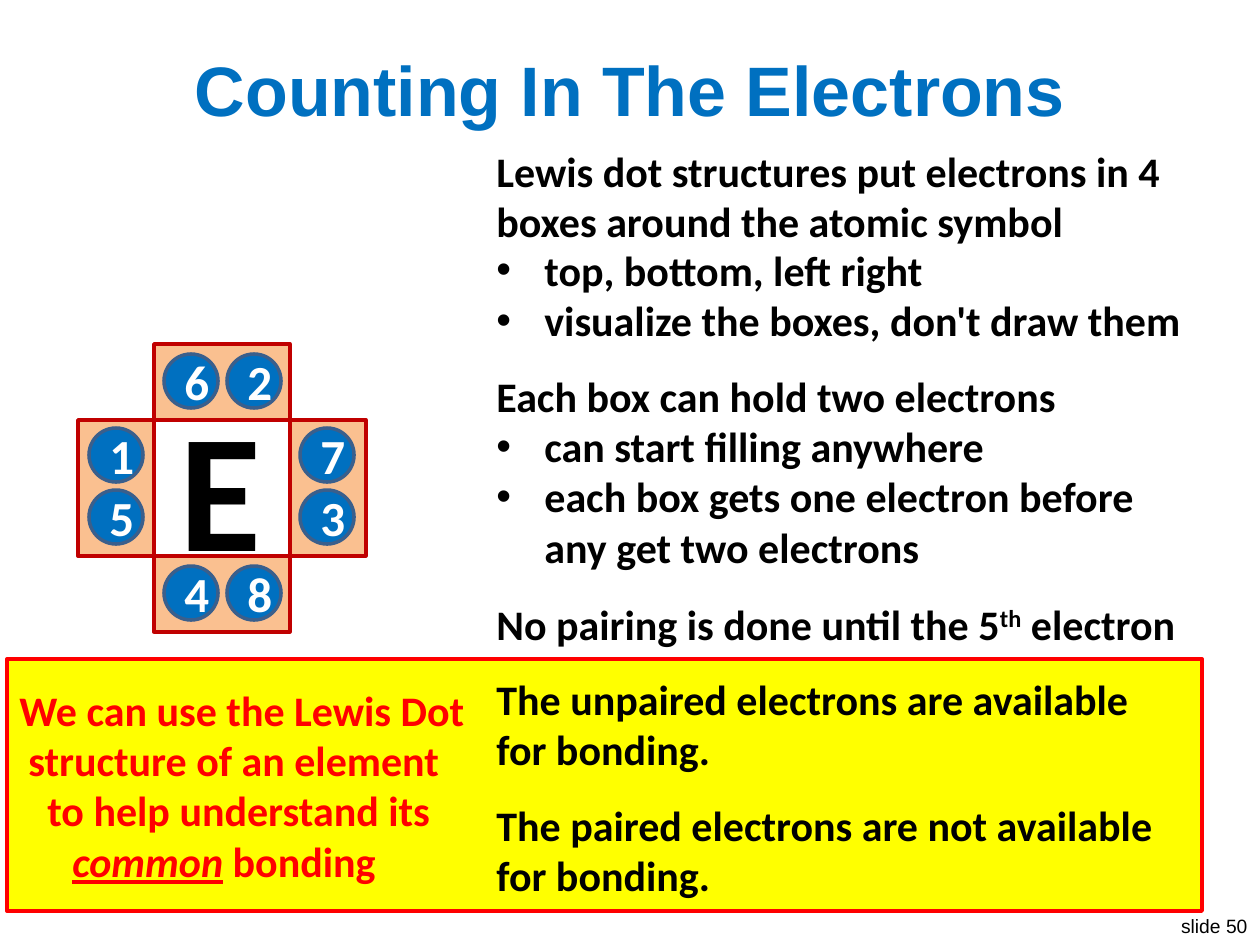
from lxml.etree import SubElement
from pptx import Presentation
from pptx.dml.color import RGBColor
from pptx.enum.shapes import MSO_SHAPE as SHAPE
from pptx.enum.text import MSO_ANCHOR as ANCHOR, MSO_AUTO_SIZE as FIT, PP_ALIGN as ALIGN
from pptx.oxml.ns import qn
from pptx.util import Pt

EMU_PER_PX = 914400 / 126
BLACK = RGBColor(0x00, 0x00, 0x00)
WHITE = RGBColor(0xFF, 0xFF, 0xFF)
BLUE = RGBColor(0x00, 0x70, 0xC0)
DARK_BLUE = RGBColor(0x3A, 0x5F, 0x8C)
PEACH = RGBColor(0xFA, 0xC0, 0x90)
CRIMSON = RGBColor(0xC0, 0x00, 0x00)
RED = RGBColor(0xFF, 0x00, 0x00)
YELLOW = RGBColor(0xFF, 0xFF, 0x00)
BULLET_INDENT = 48


def px(*lengths):
    return [round(length * EMU_PER_PX) for length in lengths]


def write(frame, paragraphs, size, color, align=ALIGN.LEFT, face="Calibri", bold=True):
    for index, (indent, bullet, pieces) in enumerate(paragraphs):
        paragraph = frame.paragraphs[0] if index == 0 else frame.add_paragraph()
        paragraph.alignment = align
        props = paragraph._p.get_or_add_pPr()
        props.set("marL", str(px(indent)[0]))
        props.set("indent", str(px(-indent if bullet else 0)[0]))
        if bullet:
            SubElement(props, qn("a:buFont"), typeface="Arial")
            SubElement(props, qn("a:buChar"), char="•")
        for words, changes in pieces:
            run = paragraph.add_run()
            run.text = words
            formats = {"name": face, "size": Pt(size), "bold": bold} | changes
            superscript = formats.pop("superscript", False)
            for key, value in formats.items():
                setattr(run.font, key, value)
            run.font.color.rgb = color
            if superscript:
                run._r.get_or_add_rPr().set("baseline", "30000")


deck = Presentation()
deck.slide_width, deck.slide_height = px(1260, 945)
slide = deck.slides.add_slide(deck.slide_layouts[6])
shapes = slide.shapes

slide_number = shapes.add_textbox(*px(1166, 908, 94, 37)).text_frame
slide_number.word_wrap = False
write(slide_number, [(0, False, [("slide 50", {})])], 11, BLACK, ALIGN.RIGHT, "Arial", False)

core_left, core_top, core, depth = 154, 420, 136, 76
electron_boxes = [
    (core_left + core, core_top, depth, core, True),
    (core_left, core_top + core, core, depth, True),
    (core_left - depth, core_top, depth, core, True),
    (core_left, core_top - depth, core, depth, True),
    (core_left, core_top, core, core, False),
]
for left, top, width, height, filled in electron_boxes:
    box = shapes.add_shape(SHAPE.RECTANGLE, *px(left, top, width, height))
    box.shadow.inherit = False
    if filled:
        box.fill.solid()
        box.fill.fore_color.rgb = PEACH
    else:
        box.fill.background()
    box.line.color.rgb = CRIMSON
    box.line.width = Pt(2)

electrons = [
    ("1", 89, 428), ("5", 89, 490), ("7", 300, 428), ("3", 300, 490),
    ("6", 164, 354), ("2", 227, 354), ("4", 164, 566), ("8", 227, 566),
]
for order, left, top in electrons:
    electron = shapes.add_shape(SHAPE.OVAL, *px(left, top, 54, 54))
    electron.shadow.inherit = False
    electron.fill.solid()
    electron.fill.fore_color.rgb = BLUE
    electron.line.color.rgb = DARK_BLUE
    electron.line.width = Pt(2)
    write(electron.text_frame, [(0, False, [(order, {})])], 28, WHITE, ALIGN.CENTER)

symbol = shapes.add_textbox(*px(179, 384, 83, 204)).text_frame
symbol.word_wrap = False
for side in ("left", "top", "right", "bottom"):
    setattr(symbol, f"margin_{side}", 0)
write(symbol, [(0, False, [("E", {})])], 96, BLACK, ALIGN.CENTER)

bonding = shapes.add_shape(SHAPE.RECTANGLE, *px(7, 659, 1195, 252))
bonding.shadow.inherit = False
bonding.fill.solid()
bonding.fill.fore_color.rgb = YELLOW
bonding.line.color.rgb = RED
bonding.line.width = Pt(2.25)
bonding.text_frame.vertical_anchor = ANCHOR.MIDDLE
write(bonding.text_frame, [
    (0, False, [("We can use the Lewis Dot", {})]),
    (9, False, [("structure of an element", {})]),
    (28, False, [("to help understand its", {})]),
    (53, False, [("common", {"italic": True, "underline": True}), (" bonding", {})]),
], 24, RED)

title = shapes.add_textbox(*px(25, 38, 1210, 101)).text_frame
title.word_wrap = True
title.vertical_anchor = ANCHOR.MIDDLE
write(title, [(0, False, [("Counting In The Electrons", {})])], 40, BLUE, ALIGN.CENTER, "Arial")

rules = [
    (667, 696, 115, [(False, [("The unpaired electrons are available for bonding.", {})])]),
    (793, 696, 115, [(False, [("The paired electrons are not available for bonding.", {})])]),
    (592, 713, 63, [(False, [("No pairing is done until the 5", {}),
                             ("th", {"superscript": True}), (" electron", {})])]),
    (139, 696, 115, [(False, [("Lewis dot structures put electrons in 4 boxes "
                               "around the atomic symbol", {})])]),
    (238, 718, 113, [(True, [("top, bottom, left right", {})]),
                     (True, [("visualize the boxes, don't draw them", {})])]),
    (364, 696, 217, [(False, [("Each box can hold two electrons", {})]),
                     (True, [("can start filling anywhere", {})]),
                     (True, [("each box gets one electron before any get two electrons", {})])]),
]
for top, width, height, lines in rules:
    rule = shapes.add_textbox(*px(484, top, width, height)).text_frame
    rule.word_wrap = True
    rule.auto_size = FIT.SHAPE_TO_FIT_TEXT
    write(rule, [(BULLET_INDENT if bullet else 0, bullet, pieces) for bullet, pieces in lines],
          24, BLACK)

deck.save("out.pptx")
